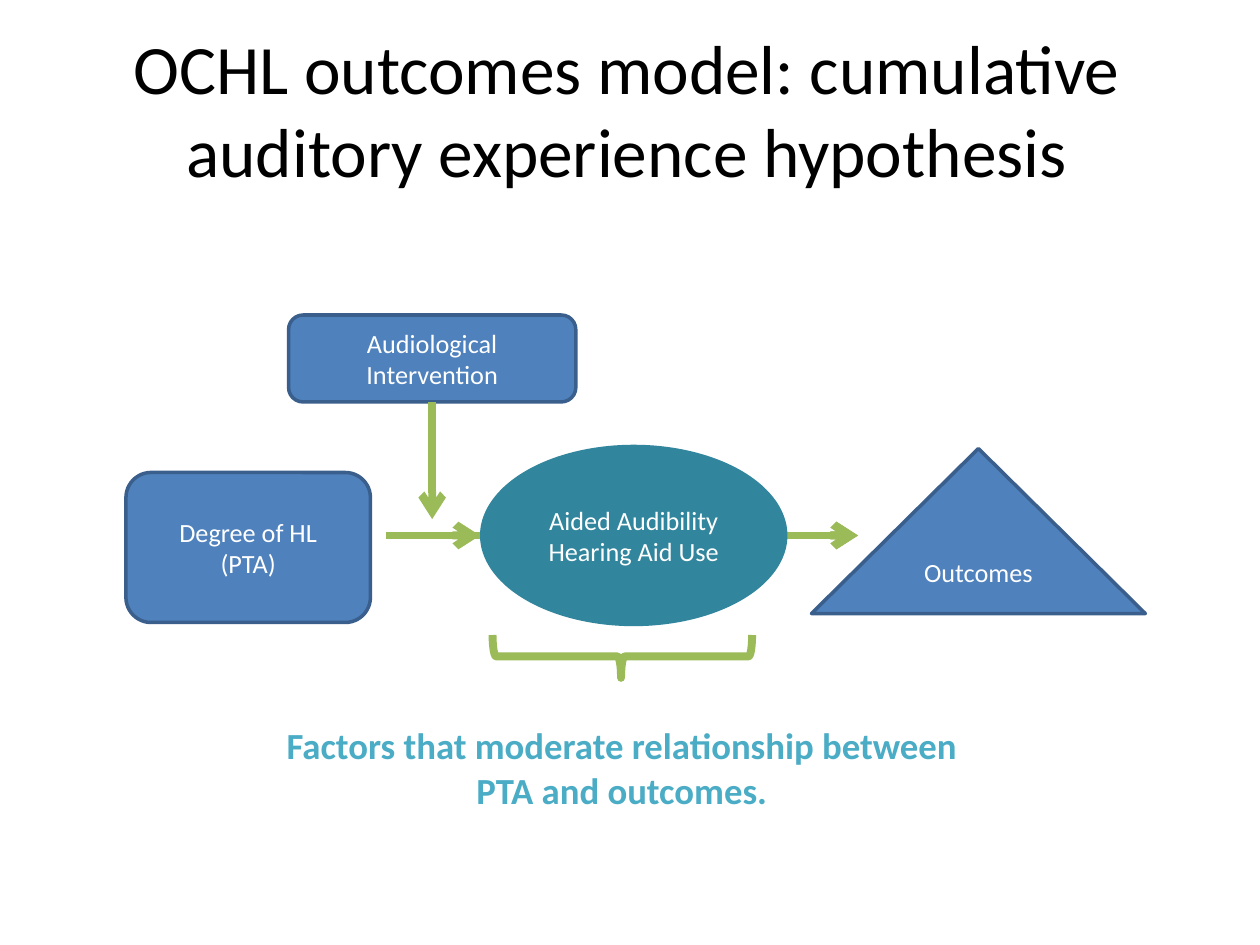
from dataclasses import dataclass

from lxml import etree
from pptx import Presentation
from pptx import util as u
from pptx.dml.color import RGBColor
from pptx.enum import shapes, text
from pptx.oxml.ns import qn

FONT = "Calibri"
WHITE, BLACK = "FFFFFF", "000000"
BLUE, NAVY, TEAL, AQUA, GREEN = "4F81BD", "3A5F8C", "31859C", "4BACC6", "9BBB59"
FLOW_Y = 4.25
SHAPE = shapes.MSO_SHAPE


@dataclass
class Area:
    left: float
    top: float
    width: float
    height: float

    def lengths(self) -> list:
        return [u.Inches(n) for n in (self.left, self.top, self.width, self.height)]


@dataclass
class Node:
    kind: int
    area: Area
    lines: list[str]
    fill: str = BLUE
    outline: str | None = NAVY


@dataclass
class Arrow:
    start: tuple[float, float]
    end: tuple[float, float]


def color(value: str) -> RGBColor:
    return RGBColor.from_string(value)


def write(shape, lines: list[str], size: float, ink: str, bold: bool = False,
          anchor=text.MSO_ANCHOR.MIDDLE) -> None:
    frame = shape.text_frame
    frame.word_wrap = True
    frame.vertical_anchor = anchor
    frame.text = "\n".join(lines)
    for para in frame.paragraphs:
        para.alignment = text.PP_ALIGN.CENTER
        para.font.name = FONT
        para.font.size = u.Pt(size)
        para.font.bold = bold
        para.font.color.rgb = color(ink)


def add_node(page, node: Node):
    shape = page.shapes.add_shape(node.kind, *node.area.lengths())
    shape.shadow.inherit = False
    shape.fill.solid()
    shape.fill.fore_color.rgb = color(node.fill)
    if node.outline:
        shape.line.color.rgb = color(node.outline)
        shape.line.width = u.Pt(2)
    else:
        shape.line.fill.background()
    write(shape, node.lines, 15, WHITE)
    return shape


def style_green(line) -> None:
    line.color.rgb = color(GREEN)
    line.width = u.Pt(4.5)


def add_arrow(page, arrow: Arrow):
    points = [u.Inches(n) for n in (*arrow.start, *arrow.end)]
    connector = page.shapes.add_connector(shapes.MSO_CONNECTOR.STRAIGHT, *points)
    style_green(connector.line)
    etree.SubElement(connector.line._get_or_add_ln(), qn("a:tailEnd"), type="arrow")
    etree.SubElement(connector._element.spPr, qn("a:effectLst"))
    return connector


def add_brace(page, area: Area) -> None:
    brace = page.shapes.add_shape(SHAPE.LEFT_BRACE, *area.lengths())
    brace.shadow.inherit = False
    brace.rotation = 270
    brace.adjustments[0] = 0.083
    brace.adjustments[1] = 0.495
    brace.fill.background()
    style_green(brace.line)


def main() -> None:
    deck = Presentation()
    deck.slide_width, deck.slide_height = u.Inches(10), u.Inches(7.5)
    page = deck.slides.add_slide(deck.slide_layouts[6])

    add_node(page, Node(SHAPE.ROUNDED_RECTANGLE, Area(1, 3.75, 1.94, 1.19),
                        ["Degree of HL", "(PTA)"]))
    add_node(page, Node(SHAPE.FLOWCHART_EXTRACT, Area(6.44, 3.56, 2.65, 1.31),
                        ["Outcomes"]))
    add_arrow(page, Arrow((3.12, FLOW_Y), (6.81, FLOW_Y)))
    add_node(page, Node(SHAPE.OVAL, Area(3.81, 3.53, 2.44, 1.44),
                        ["Aided Audibility", "Hearing Aid Use"], TEAL, None))
    for start, end in ((3.06, 3.81), (6.25, 6.81)):
        add_arrow(page, Arrow((start, FLOW_Y), (end, FLOW_Y)))
    add_brace(page, Area(4.77, 4.18, 0.34, 2.06))

    caption = page.shapes.add_textbox(*Area(2.03, 5.69, 5.81, 0.81).lengths())
    write(caption, ["Factors that moderate relationship between PTA and outcomes."],
          21, AQUA, bold=True, anchor=text.MSO_ANCHOR.TOP)

    intervention = add_node(page, Node(SHAPE.ROUNDED_RECTANGLE,
                                       Area(2.29, 2.5, 2.28, 0.69),
                                       ["Audiological Intervention"]))
    influence = add_arrow(page, Arrow((3.43, 3.19), (3.43, 4.12)))
    influence.begin_connect(intervention, 2)

    title = page.shapes.add_textbox(*Area(0.17, 0.27, 9.61, 1.18).lengths())
    write(title, ["OCHL outcomes model: cumulative auditory experience hypothesis"],
          39.6, BLACK)
    deck.save("out.pptx")


if __name__ == "__main__":
    main()
